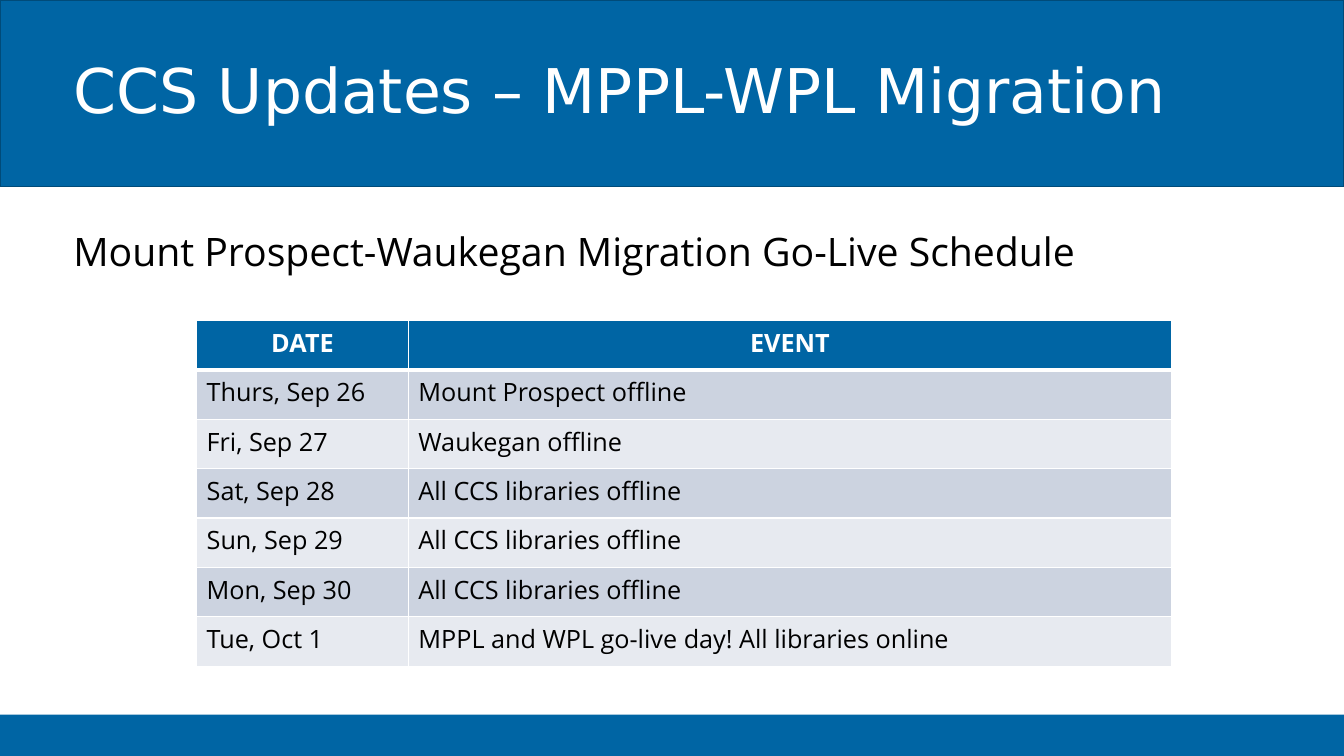
import pptx
import pptx.util
import pptx.dml.color
import pptx.enum.shapes
import pptx.enum.text
import pptx.oxml
import pptx.oxml.ns
from lxml import etree

Inches = pptx.util.Inches
Pt = pptx.util.Pt
RGBColor = pptx.dml.color.RGBColor
Align = pptx.enum.text.PP_ALIGN
Anchor = pptx.enum.text.MSO_ANCHOR

TITLE = "CCS Updates – MPPL-WPL Migration"
LEAD = "Mount Prospect-Waukegan Migration Go-Live Schedule"
ROWS = [
    ("DATE", "EVENT"),
    ("Thurs, Sep 26", "Mount Prospect offline"),
    ("Fri, Sep 27", "Waukegan offline"),
    ("Sat, Sep 28", "All CCS libraries offline"),
    ("Sun, Sep 29", "All CCS libraries offline"),
    ("Mon, Sep 30", "All CCS libraries offline"),
    ("Tue, Oct 1", "MPPL and WPL go-live day! All libraries online"),
]

BLUE = RGBColor(0x00, 0x65, 0xA4)
NAVY = RGBColor(0x00, 0x4B, 0x79)
WHITE = RGBColor(0xFF, 0xFF, 0xFF)
BLACK = RGBColor(0x00, 0x00, 0x00)
BANDS = (RGBColor(0xE7, 0xEA, 0xF0), RGBColor(0xCC, 0xD3, 0xE0))
HEAD_FONT = "DejaVu Sans"
BODY_FONT = "Open Sans"

WIDE, HIGH = 13.33, 7.5
FOOT = 0.41
LEFT = 0.63
COLS = (2.1, 7.57)
ROW = 0.49


def add_run(para, text, font, size, color, bold=False):
    run = para.add_run()
    run.text = text
    run.font.name = font
    run.font.size = Pt(size)
    run.font.color.rgb = color
    run.font.bold = bold


def add_bar(slide, top, height, edge=None):
    bar = slide.shapes.add_shape(
        pptx.enum.shapes.MSO_SHAPE.RECTANGLE,
        0, Inches(top), Inches(WIDE), Inches(height))
    bar.shadow.inherit = False
    bar.fill.solid()
    bar.fill.fore_color.rgb = BLUE
    if edge is None:
        bar.line.fill.background()
    else:
        bar.line.color.rgb = edge
        bar.line.width = Pt(1)


def add_text(slide, box, text, font, size, color, anchor):
    frame = slide.shapes.add_textbox(*map(Inches, box)).text_frame
    frame.word_wrap = True
    frame.vertical_anchor = anchor
    para = frame.paragraphs[0]
    para.line_spacing = 0.9
    add_run(para, text, font, size, color)


def set_edges(cell, top, bottom):
    """Draw white cell borders; top and bottom are widths in points."""
    props = cell._tc.get_or_add_tcPr()
    sides = (("lnL", 1), ("lnR", 1), ("lnT", top), ("lnB", bottom))
    for place, (side, width) in enumerate(sides):
        line = etree.Element(pptx.oxml.ns.qn("a:" + side), w=str(Pt(width)))
        fill = etree.SubElement(line, pptx.oxml.ns.qn("a:solidFill"))
        etree.SubElement(fill, pptx.oxml.ns.qn("a:srgbClr"), val=str(WHITE))
        props.insert(place, line)


def add_dates(slide):
    table = slide.shapes.add_table(
        len(ROWS), len(COLS), Inches(1.95), Inches(3.18),
        Inches(sum(COLS)), Inches(ROW * len(ROWS))).table
    for col, width in zip(table.columns, COLS):
        col.width = Inches(width)
    for r, texts in enumerate(ROWS):
        table.rows[r].height = Inches(ROW)
        head = r == 0
        for c, text in enumerate(texts):
            cell = table.cell(r, c)
            cell.fill.solid()
            cell.fill.fore_color.rgb = BLUE if head else BANDS[r % 2]
            set_edges(cell, 3 if r == 1 else 1, 3 if head else 1)
            para = cell.text_frame.paragraphs[0]
            para.alignment = Align.CENTER if head else Align.LEFT
            add_run(para, text, BODY_FONT, 18, WHITE if head else BLACK, head)


def main():
    deck = pptx.Presentation()
    deck.slide_width, deck.slide_height = Inches(WIDE), Inches(HIGH)
    slide = deck.slides.add_slide(deck.slide_layouts[6])
    add_bar(slide, HIGH - FOOT, FOOT)
    add_bar(slide, 0, 1.85, NAVY)
    add_text(slide, (LEFT, 2.26, 12.2, 4.75), LEAD,
             BODY_FONT, 28, BLACK, Anchor.TOP)
    add_text(slide, (LEFT, 0, WIDE - LEFT, 1.86), TITLE,
             HEAD_FONT, 44, WHITE, Anchor.MIDDLE)
    add_dates(slide)
    deck.save("out.pptx")


if __name__ == "__main__":
    main()
